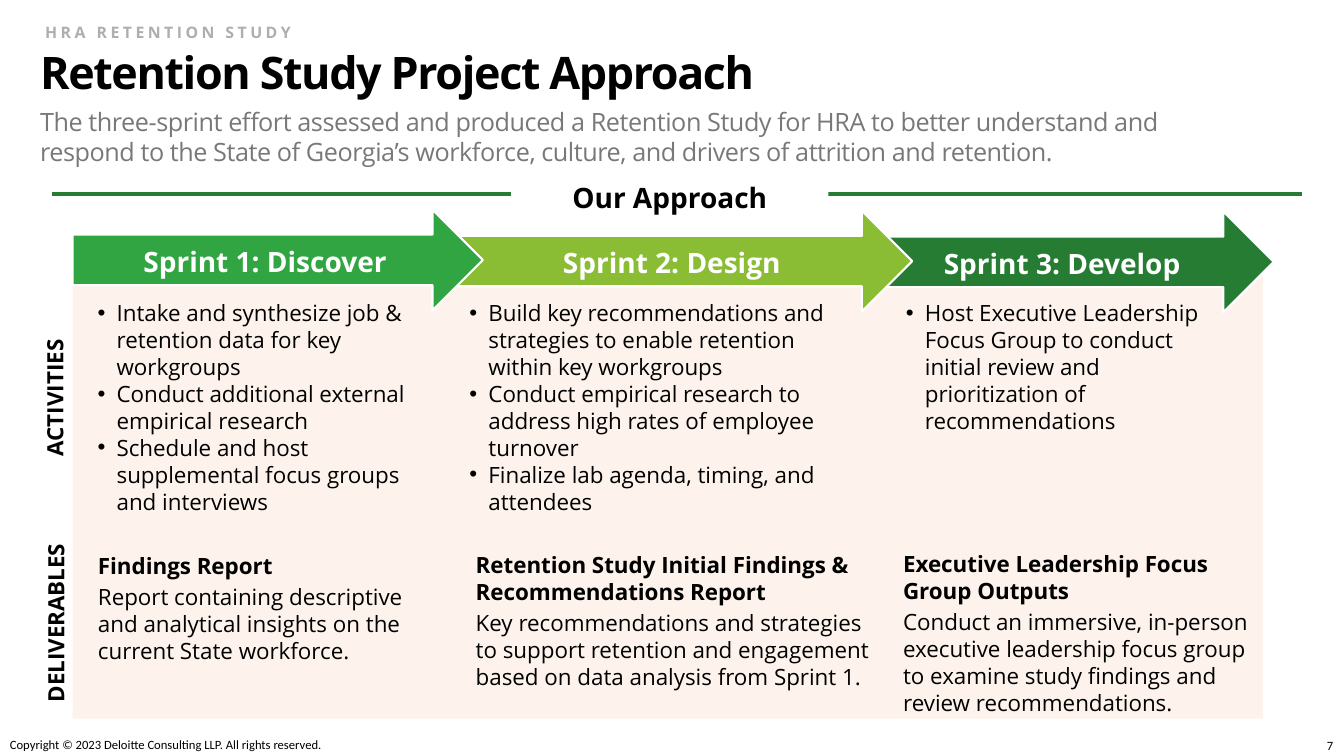
from lxml import etree
from pptx import Presentation
from pptx import util as u
from pptx.dml.color import RGBColor
from pptx.enum import shapes, text
from pptx.oxml import ns

COLORS = {
    "black": "000000", "white": "FFFFFF", "kicker": "AEAEAE", "subtitle": "787878",
    "panel": "FCE6D6", "discover": "32A543", "design": "8ABD34", "develop": "257C32",
}
BODY = {"size": 16}
BOLD = {"size": 16, "bold": True}
BANNER = {"size": 20, "bold": True}
FOOTER = {"size": 9, "name": "Calibri"}
NO_INSETS = (0, 0, 0, 0)
EVEN_INSETS = (0.13, 0.13, 0.13, 0.13)
LIST_INSETS = (0.25, 0.13, 0.13, 0.13)
LEFT, CENTER, RIGHT = text.PP_ALIGN.LEFT, text.PP_ALIGN.CENTER, text.PP_ALIGN.RIGHT
TOP, MIDDLE = text.MSO_ANCHOR.TOP, text.MSO_ANCHOR.MIDDLE

# Each sprint: name, colour, then (left, top, width, height) of arrow, activities, deliverable
SPRINTS = [
    {"name": "Sprint 1: Discover", "color": "discover",
     "arrow": (1.83, 5.28, 10.34, 2.54),
     "activities_at": (2.21, 7.42, 8.89, 5.74),
     "activities": ["Intake and synthesize job & retention data for key workgroups",
                    "Conduct additional external empirical research",
                    "Schedule and host supplemental focus groups and interviews"],
     "deliverable_at": (2.34, 13.79, 8.71, 3.12),
     "deliverable": ("Findings Report",
                     "Report containing descriptive and analytical insights on the "
                     "current State workforce.")},
    {"name": "Sprint 2: Design", "color": "design",
     "arrow": (11.51, 5.31, 11.48, 2.54),
     "activities_at": (11.58, 7.42, 9.45, 5.74),
     "activities": ["Build key recommendations and strategies to enable retention "
                    "within key workgroups",
                    "Conduct empirical research to address high rates of employee turnover",
                    "Finalize lab agenda, timing, and attendees"],
     "deliverable_at": (11.86, 13.77, 10.21, 3.81),
     "deliverable": ("Retention Study Initial Findings & Recommendations Report",
                     "Key recommendations and strategies to support retention and "
                     "engagement based on data analysis from Sprint 1.")},
    {"name": "Sprint 3: Develop", "color": "develop",
     "arrow": (22.07, 5.33, 10.03, 2.54),
     "activities_at": (22.58, 7.42, 8, 3.68),
     "activities": ["Host Executive Leadership Focus Group to conduct initial review "
                    "and prioritization of recommendations"],
     "deliverable_at": (22.63, 13.74, 9.19, 4.42),
     "deliverable": ("Executive Leadership Focus Group Outputs",
                     "Conduct an immersive, in-person executive leadership focus group "
                     "to examine study findings and review recommendations.")},
]


class Slide:
    """Holds the current page and the shared text style; lengths are in cm."""

    def __init__(self, page, font="Open Sans"):
        self.page = page
        self.font = font

    def color(self, name):
        return RGBColor.from_string(COLORS[name])

    def set_text(self, box, rows, color="black", insets=(0.25, 0.13, 0.25, 0.13), anchor=TOP,
                 align=LEFT, line_spacing=None, gap=0, tracking=None, bullet=None):
        """Fill a box with rows of (wording, font format), one paragraph each."""
        frame = box.text_frame
        layout = {"word_wrap": True, "auto_size": text.MSO_AUTO_SIZE.NONE,
                  "vertical_anchor": anchor}
        for side, inset in zip(("left", "top", "right", "bottom"), insets):
            layout["margin_" + side] = u.Cm(inset)
        for key, value in layout.items():
            setattr(frame, key, value)
        for index, (wording, style) in enumerate(rows):
            para = frame.add_paragraph() if index else frame.paragraphs[0]
            para.alignment = align
            para.line_spacing = line_spacing
            para.space_before = u.Pt(gap if index else 0)
            if bullet:
                self.add_bullet(para, bullet)
            span = para.add_run()
            span.text = wording
            for key, value in {"name": self.font, "bold": False, **style}.items():
                setattr(span.font, key, u.Pt(value) if key == "size" else value)
            span.font.color.rgb = self.color(color)
            if tracking:
                span.font._element.set("spc", str(round(tracking * 100)))

    def add_bullet(self, para, symbol, indent=0.48):
        properties = para._p.get_or_add_pPr()
        properties.set("marL", str(u.Cm(indent)))
        properties.set("indent", str(-u.Cm(indent)))
        etree.SubElement(properties, ns.qn("a:buFont")).set("typeface", "Arial")
        etree.SubElement(properties, ns.qn("a:buChar")).set("char", symbol)

    def text(self, at, rows, rotation=0, **layout):
        box = self.page.shapes.add_textbox(*map(u.Cm, at))
        box.rotation = rotation
        self.set_text(box, rows, **layout)

    def shape(self, kind, at, fill, opacity=None, outline=None):
        box = self.page.shapes.add_shape(kind, *map(u.Cm, at))
        box.shadow.inherit = False
        box.fill.solid()
        box.fill.fore_color.rgb = self.color(fill)
        if opacity:
            tint = box._element.spPr.find(".//" + ns.qn("a:srgbClr"))
            etree.SubElement(tint, ns.qn("a:alpha")).set("val", str(opacity * 1000))
        if outline:
            box.line.color.rgb = self.color(outline)
            box.line.width = u.Pt(1.5)
        else:
            box.line.fill.background()
        return box

    def line(self, start, end, color, width):
        rule = self.page.shapes.add_connector(
            shapes.MSO_CONNECTOR.STRAIGHT, *map(u.Cm, start + end))
        rule.line.color.rgb = self.color(color)
        rule.line.width = u.Pt(width)
        etree.SubElement(rule._element.spPr, ns.qn("a:effectLst"))


def main():
    deck = Presentation()
    deck.slide_width, deck.slide_height = u.Cm(33.87), u.Cm(19.05)
    slide = Slide(deck.slides.add_slide(deck.slide_layouts[6]))
    rectangle = shapes.MSO_SHAPE.RECTANGLE

    slide.text((32.74, 18.59, 0.86, 0.38), [("7", FOOTER)], insets=NO_INSETS, align=RIGHT)
    slide.text((0.25, 18.62, 14.88, 0.36),
               [("Copyright © 2023 Deloitte Consulting LLP. All rights reserved.", FOOTER)],
               insets=NO_INSETS, line_spacing=u.Pt(9.5))
    slide.text((1.14, 0.58, 11.68, 0.53),
               [("HRA RETENTION STUDY", {"size": 11.3, "bold": True})],
               color="kicker", insets=NO_INSETS, tracking=2.5)
    slide.text((0.76, 2.54, 31.06, 1.78),
               [("The three-sprint effort assessed and produced a Retention Study for HRA to "
                 "better understand and respond to the State of Georgia’s workforce, culture, "
                 "and drivers of attrition and retention.", {"size": 18})],
               color="subtitle", tracking=-0.3)
    slide.text((0.76, 0.94, 29.21, 1.91),
               [("Retention Study Project Approach", {"size": 32, "bold": True})],
               anchor=MIDDLE, line_spacing=0.9, tracking=-1)

    slide.shape(rectangle, (1.83, 6.93, 30, 11.18), "panel", opacity=46)
    for label, at in (("ACTIVITIES", (-0.81, 9.09, 4.37, 0.94)),
                      ("DELIVERABLES", (-1.47, 14.61, 5.74, 0.94))):
        slide.text(at, [(label, BOLD)], rotation=270)

    slide.line((32.82, 4.88), (1.32, 4.88), "develop", 3)
    heading = slide.shape(rectangle, (12.88, 4.42, 8, 1.12), "white")
    slide.set_text(heading, [("Our Approach", BANNER)], align=CENTER)

    for sprint in reversed(SPRINTS):
        arrow = slide.shape(shapes.MSO_SHAPE.RIGHT_ARROW, sprint["arrow"], sprint["color"],
                            outline="white")
        slide.set_text(arrow, [(sprint["name"], BANNER)], color="white", align=CENTER,
                       anchor=MIDDLE, insets=(0.25, 0.25, 0.25, 0.25), line_spacing=1.06)
    for sprint in SPRINTS:
        slide.text(sprint["activities_at"], [(item, BODY) for item in sprint["activities"]],
                   insets=LIST_INSETS, bullet="•")
        slide.text(sprint["deliverable_at"], list(zip(sprint["deliverable"], (BOLD, BODY))),
                   insets=EVEN_INSETS, gap=3)

    deck.save("out.pptx")


if __name__ == "__main__":
    main()
